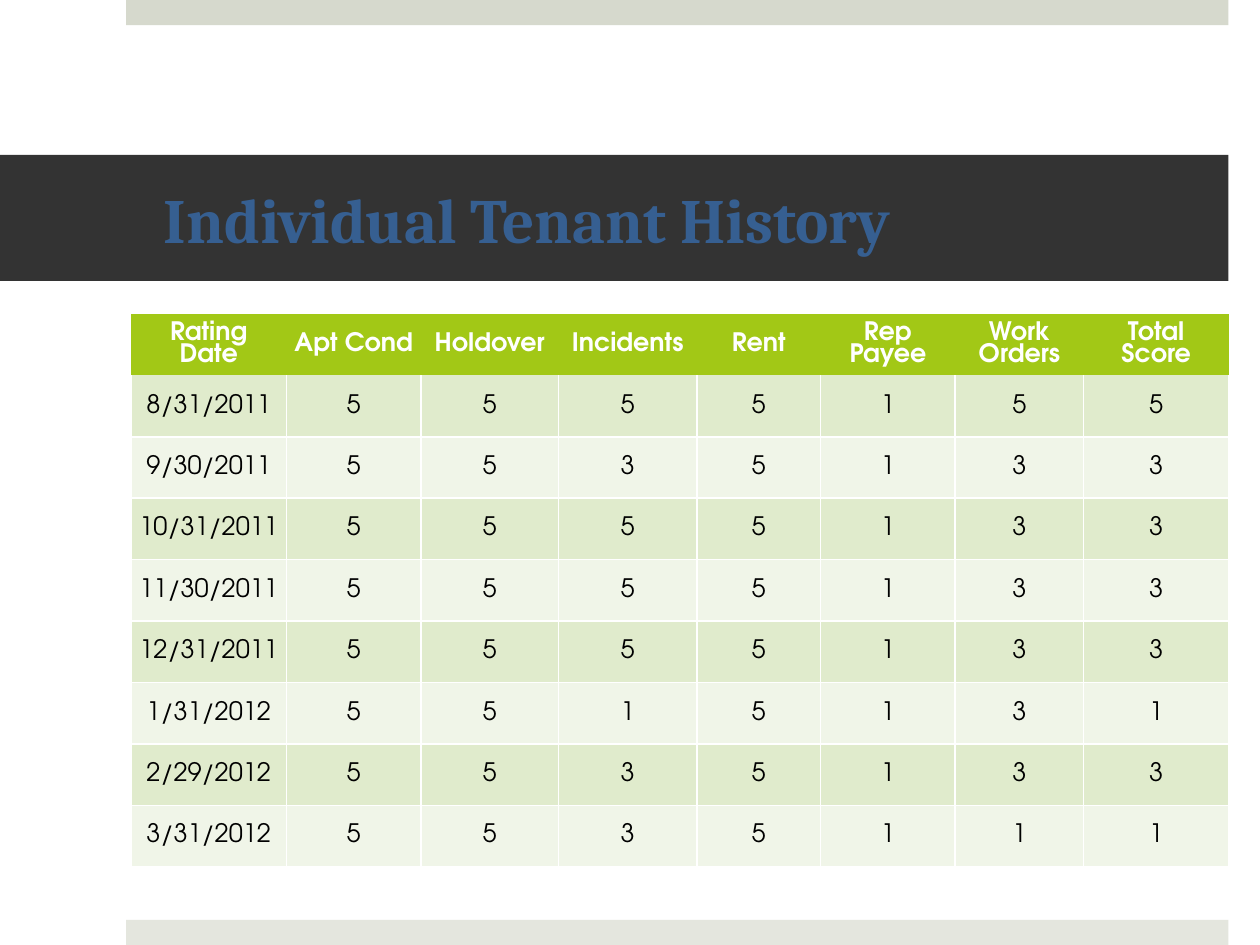
from lxml import etree
from pptx import Presentation
from pptx.dml.color import RGBColor
from pptx.enum import shapes, text
from pptx.oxml import ns
from pptx.util import Pt

WHITE = RGBColor(0xFF, 0xFF, 0xFF)
BLACK = RGBColor(0, 0, 0)
CHARCOAL = RGBColor(0x33, 0x33, 0x33)
BLUE = RGBColor(0x36, 0x5F, 0x91)
TOP_GREY = RGBColor(0xD6, 0xD9, 0xCD)
BOTTOM_GREY = RGBColor(0xE4, 0xE6, 0xDE)
GREEN = RGBColor(0xA2, 0xC8, 0x16)
BANDS = (RGBColor(0xE0, 0xEB, 0xCC), RGBColor(0xF0, 0xF5, 0xE8))

HEADERS = ("Rating Date", "Apt Cond", "Holdover", "Incidents", "Rent",
           "Rep\nPayee", "Work Orders", "Total Score")
RATINGS = (
    ("8/31/2011", 5, 5, 5, 5, 1, 5, 5),
    ("9/30/2011", 5, 5, 3, 5, 1, 3, 3),
    ("10/31/2011", 5, 5, 5, 5, 1, 3, 3),
    ("11/30/2011", 5, 5, 5, 5, 1, 3, 3),
    ("12/31/2011", 5, 5, 5, 5, 1, 3, 3),
    ("1/31/2012", 5, 5, 1, 5, 1, 3, 1),
    ("2/29/2012", 5, 5, 3, 5, 1, 3, 3),
    ("3/31/2012", 5, 5, 3, 5, 1, 1, 1),
)
COL_WIDTHS = (88.6, 77, 78.5, 79.2, 70.6, 77, 73.4, 82.8)


def add_bar(s, box, color):
    """Add a plain filled rectangle in the box."""
    sp = s.shapes.add_shape(shapes.MSO_SHAPE.RECTANGLE, *map(Pt, box))
    sp.shadow.inherit = False
    sp.fill.solid()
    sp.fill.fore_color.rgb = color
    sp.line.fill.background()
    return sp


def format_runs(p, font, size, color, bold):
    """Apply one font to every run of a paragraph."""
    for r in p.runs:
        r.font.name = font
        r.font.size = Pt(size)
        r.font.color.rgb = color
        r.font.bold = bold


def add_title(s, box, title):
    """Add the dark title band with its text."""
    tf = add_bar(s, box, CHARCOAL).text_frame
    tf.word_wrap = True
    tf.vertical_anchor = text.MSO_ANCHOR.MIDDLE
    tf.margin_left, tf.margin_right = Pt(93.6), Pt(21.6)
    tf.text = title
    p = tf.paragraphs[0]
    p.alignment = text.PP_ALIGN.LEFT
    format_runs(p, "Cambria", 36, BLUE, True)


def set_borders(cell, white_sides):
    """Draw white lines on the named sides and none on the others."""
    tc_pr = cell._tc.get_or_add_tcPr()
    for side in "LRTB":
        ln = etree.SubElement(tc_pr, ns.qn(f"a:ln{side}"), w=str(Pt(1)))
        if side in white_sides:
            fill = etree.SubElement(ln, ns.qn("a:solidFill"))
            etree.SubElement(fill, ns.qn("a:srgbClr"), val=str(WHITE))
        else:
            etree.SubElement(ln, ns.qn("a:noFill"))


def fill_cell(cell, value, row):
    """Write and style one cell according to its row."""
    header = row == 0
    set_borders(cell, "" if header else "LRB" if row == 1 else "LRTB")
    cell.fill.solid()
    cell.fill.fore_color.rgb = GREEN if header else BANDS[(row - 1) % 2]
    cell.vertical_anchor = text.MSO_ANCHOR.MIDDLE
    cell.margin_left = cell.margin_right = Pt(3.6)
    cell.margin_top = cell.margin_bottom = Pt(3.6)
    cell.text_frame.text = str(value)
    for p in cell.text_frame.paragraphs:
        p.alignment = text.PP_ALIGN.CENTER
        if header:
            p.line_spacing = Pt(13)
        format_runs(p, "TeX Gyre Adventor", 14.5, WHITE if header else BLACK, header)


def add_ratings(s, box):
    """Add the rating history table in the box."""
    rows = (HEADERS, *RATINGS)
    table = s.shapes.add_table(len(rows), len(HEADERS), *map(Pt, box)).table
    for col, width in zip(table.columns, COL_WIDTHS):
        col.width = Pt(width)
    for i, values in enumerate(rows):
        table.rows[i].height = Pt(box[3] / len(rows))
        for j, value in enumerate(values):
            fill_cell(table.cell(i, j), value, i)


def main():
    """Build the slide and save it."""
    prs = Presentation()
    prs.slide_width, prs.slide_height = Pt(720), Pt(540)
    s = prs.slides.add_slide(prs.slide_layouts[6])
    add_bar(s, (72, 0, 630, 14.4), TOP_GREY)
    add_bar(s, (72, 525.6, 630, 14.4), BOTTOM_GREY)
    add_title(s, (0, 88.5, 702, 72), "Individual Tenant History")
    add_ratings(s, (75, 179.4, sum(COL_WIDTHS), 315.9))
    prs.save("out.pptx")


if __name__ == "__main__":
    main()
